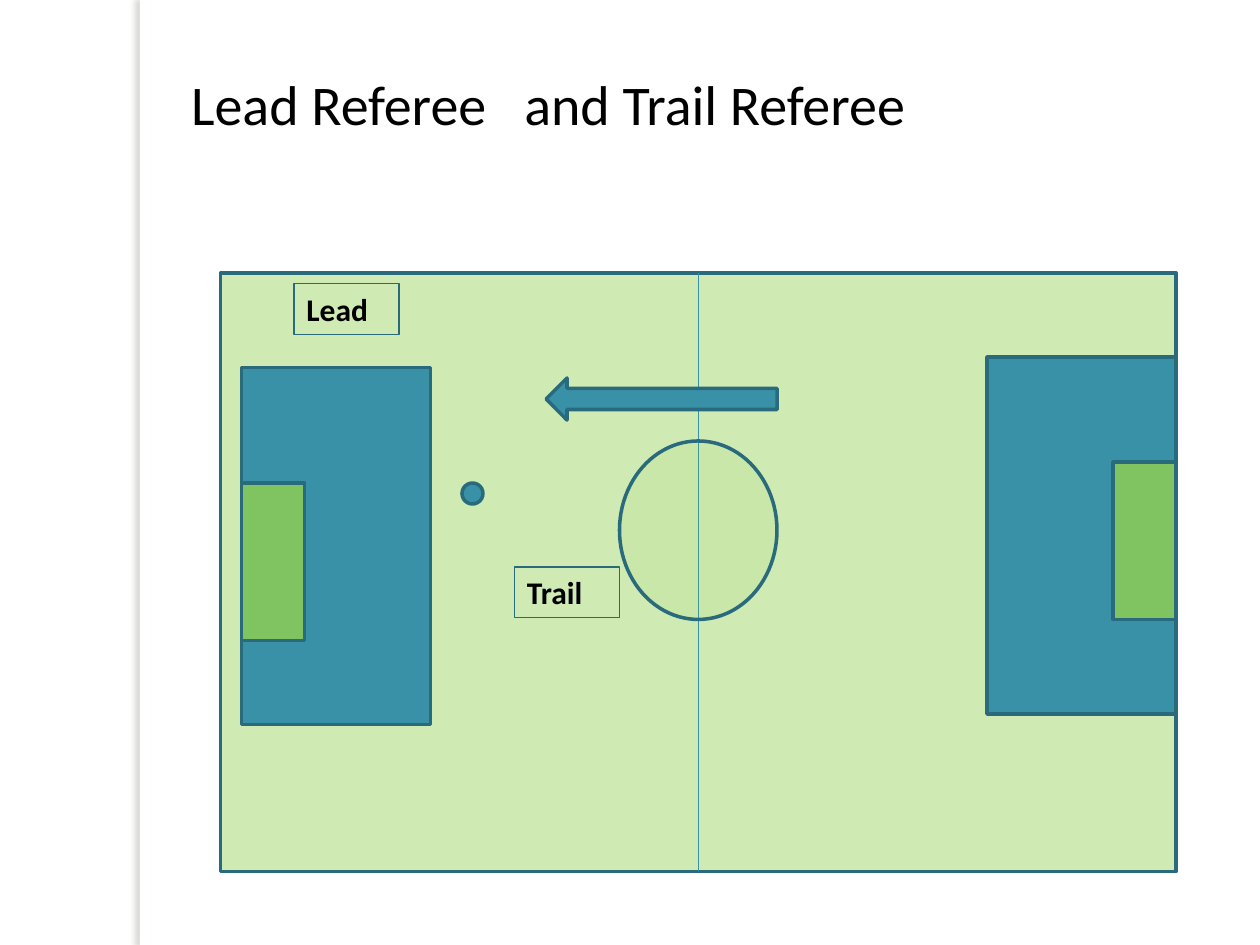
from lxml.etree import SubElement
from pptx import Presentation
from pptx.dml.color import RGBColor
from pptx.enum.shapes import MSO_CONNECTOR, MSO_SHAPE
from pptx.enum.text import MSO_ANCHOR, MSO_AUTO_SIZE, PP_ALIGN
from pptx.oxml import parse_xml
from pptx.oxml.ns import nsdecls, qn
from pptx.util import Pt

BLACK, WHITE = "000000", "FFFFFF"
GREEN, TEAL, OUTLINE = "92D050", "3891A7", "296B7C"
FONT = "Calibri"

# Boxes are (left, top, width, height) in points.
PITCH = (126, 156, 546, 342)
PENALTY_SIZE = (108, 204)
GOAL_SIZE = (36, 90)
LABEL_SIZE = (60, 29)


def color(hex_string):
    return RGBColor.from_string(hex_string)


def add_figure(slide, kind, box, fill=None, opacity=100, line=OUTLINE, line_width=2):
    """Add a preset shape; opacity is a percentage, None means no fill or line."""
    shape = slide.shapes.add_shape(kind, *map(Pt, box))
    shape.shadow.inherit = False
    if fill is None:
        shape.fill.background()
    else:
        shape.fill.solid()
        shape.fill.fore_color.rgb = color(fill)
        if opacity < 100:
            fill_color = shape.fill._xPr.find(qn("a:solidFill"))[0]
            SubElement(fill_color, qn("a:alpha"), val=str(opacity * 1000))
    if line is None:
        shape.line.fill.background()
    else:
        shape.line.color.rgb = color(line)
        shape.line.width = Pt(line_width)
    return shape


def format_text(shape, text, size, bold=False):
    frame = shape.text_frame
    frame.text = text
    frame.word_wrap = True
    frame.auto_size = MSO_AUTO_SIZE.SHAPE_TO_FIT_TEXT
    frame.vertical_anchor = MSO_ANCHOR.TOP
    paragraph = frame.paragraphs[0]
    paragraph.alignment = PP_ALIGN.LEFT
    font = paragraph.font
    font.name, font.size, font.bold = FONT, Pt(size), bold
    font.color.rgb = color(BLACK)


def add_title(slide, text, box):
    title = slide.shapes.title
    title.left, title.top, title.width, title.height = map(Pt, box)
    format_text(title, text, 32)


def add_side_strip(slide):
    """Add the white strip whose shadow falls to the left."""
    strip = add_figure(slide, MSO_SHAPE.RECTANGLE, (80, 0, 6, 540), WHITE, line=None)
    effects = strip._element.spPr.find(qn("a:effectLst"))
    effects.append(parse_xml(
        f'<a:outerShdw {nsdecls("a")} blurRad="{Pt(3)}" dist="{Pt(3)}" dir="10800000" '
        'algn="tl" rotWithShape="0"><a:srgbClr val="736F63">'
        '<a:alpha val="25000"/></a:srgbClr></a:outerShdw>'))


def add_halfway_line(slide):
    left, top, width, height = PITCH
    middle = left + width / 2
    line = slide.shapes.add_connector(
        MSO_CONNECTOR.STRAIGHT, Pt(middle), Pt(top), Pt(middle), Pt(top + height))
    line.line.color.rgb = color(TEAL)
    line.line.width = Pt(0.75)
    SubElement(line._element.spPr, qn("a:effectLst"))


def add_label(slide, text, position):
    label = add_figure(slide, MSO_SHAPE.RECTANGLE, position + LABEL_SIZE, line_width=0.75)
    format_text(label, text, 18, bold=True)


def add_pitch(slide):
    right = PITCH[0] + PITCH[2]
    add_figure(slide, MSO_SHAPE.RECTANGLE, PITCH, GREEN, 43)
    for position in ((138, 210), (right - PENALTY_SIZE[0], 204)):
        add_figure(slide, MSO_SHAPE.RECTANGLE, position + PENALTY_SIZE, TEAL)
    add_halfway_line(slide)
    for position in ((138, 276), (right - GOAL_SIZE[0], 264)):
        add_figure(slide, MSO_SHAPE.RECTANGLE, position + GOAL_SIZE, GREEN, 80)
    add_figure(slide, MSO_SHAPE.OVAL, (354, 252, 90, 102), GREEN, 10)


def main():
    presentation = Presentation()
    presentation.slide_width, presentation.slide_height = Pt(720), Pt(540)
    slide = presentation.slides.add_slide(presentation.slide_layouts[5])
    slide.background.fill.solid()
    slide.background.fill.fore_color.rgb = color(WHITE)

    add_side_strip(slide)
    add_title(slide, "Lead Referee   and Trail Referee", (102, 36, 432, 46))
    add_pitch(slide)
    add_figure(slide, MSO_SHAPE.LEFT_ARROW, (312, 216, 132, 24), TEAL)
    add_label(slide, "Trail", (294, 324))
    add_label(slide, "Lead", (168, 162))
    add_figure(slide, MSO_SHAPE.FLOWCHART_CONNECTOR, (264, 276, 12, 12), TEAL)
    presentation.save("out.pptx")


if __name__ == "__main__":
    main()
